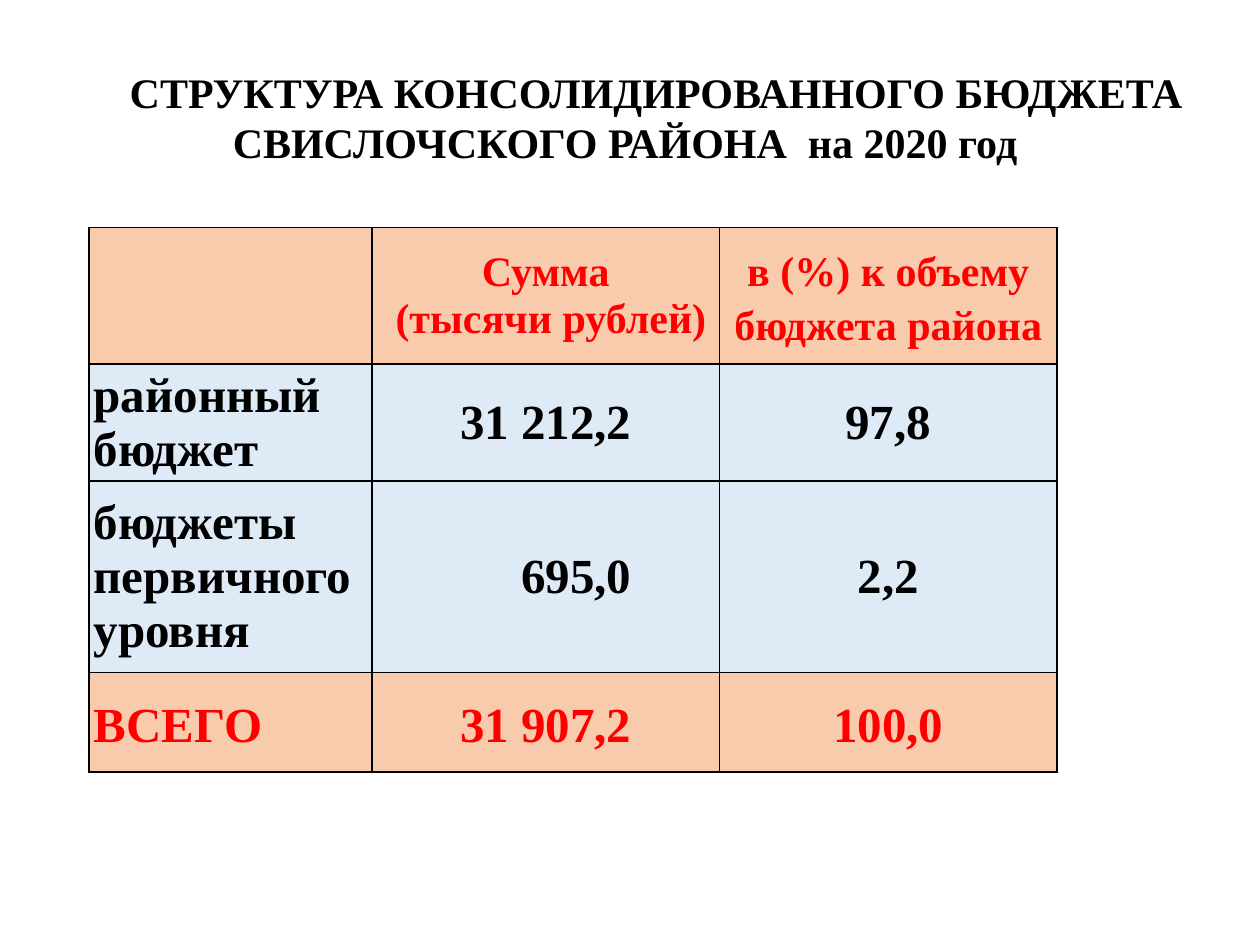
from lxml.etree import SubElement
from pptx import Presentation
from pptx.dml.color import RGBColor
from pptx.enum.text import MSO_ANCHOR, PP_ALIGN
from pptx.oxml.ns import qn
from pptx.util import Cm, Pt

COLORS = {"peach": "F8CBAD", "sky": "DEEBF7", "red": "FF0000", "black": "000000"}


def add_span(para, text, size, color):
    span = para.add_run()
    span.text = text
    span.font.name = "Times New Roman"
    span.font.size = Pt(size)
    span.font.bold = True
    span.font.color.rgb = RGBColor.from_string(COLORS[color])


def add_borders(cell):
    properties = cell._tc.get_or_add_tcPr()
    for position, side in enumerate(("lnL", "lnR", "lnT", "lnB")):
        line = properties.makeelement(qn(f"a:{side}"), {"w": str(Pt(1))})
        fill = SubElement(line, qn("a:solidFill"))
        SubElement(fill, qn("a:srgbClr"), val=COLORS["black"])
        properties.insert(position, line)


deck = Presentation()
deck.slide_width, deck.slide_height = Cm(25.4), Cm(19.05)
page = deck.slides.add_slide(deck.slide_layouts[6])

# Budget table
column_widths = [5.71, 7, 6.81]
row_heights = [2.75, 2.36, 3.86, 2]
rows = [
    ["", "Сумма\n (тысячи рублей)", "в (%) к объему бюджета района"],
    ["районный бюджет", "31 212,2", "97,8"],
    ["бюджеты первичного уровня", "695,0", "2,2"],
    ["ВСЕГО", "31 907,2", "100,0"],
]
row_styles = [("peach", "red", 24), ("sky", "black", 28), ("sky", "black", 28), ("peach", "red", 28)]
loose_cells = {(0, 2), (3, 0), (3, 1), (3, 2)}

table = page.shapes.add_table(
    len(rows), len(column_widths), Cm(1.79), Cm(4.59), Cm(sum(column_widths)), Cm(sum(row_heights))
).table
for column, width in zip(table.columns, column_widths):
    column.width = Cm(width)
for row, height in zip(table.rows, row_heights):
    row.height = Cm(height)

for row_index, (texts, (fill, color, size)) in enumerate(zip(rows, row_styles)):
    for column_index, text in enumerate(texts):
        cell = table.cell(row_index, column_index)
        cell.fill.solid()
        cell.fill.fore_color.rgb = RGBColor.from_string(COLORS[fill])
        cell.vertical_anchor = MSO_ANCHOR.MIDDLE
        cell.margin_left = cell.margin_right = Cm(0.1)
        cell.margin_top = cell.margin_bottom = 0
        add_borders(cell)
        if not text:
            continue
        for line_index, line in enumerate(text.split("\n")):
            frame = cell.text_frame
            para = frame.add_paragraph() if line_index else frame.paragraphs[0]
            para.alignment = PP_ALIGN.CENTER if column_index else PP_ALIGN.LEFT
            if (row_index, column_index) in loose_cells:
                para.line_spacing = 1.15
            add_span(para, line, size, color)

# The shorter sum lines up with the right edge of the others
short_sum = table.cell(2, 1).text_frame.paragraphs[0]
short_sum._p.get_or_add_pPr().set("marL", str(Cm(1.23)))

# Title
title = page.shapes.add_textbox(Cm(0.5), Cm(1.12), Cm(24.2), Cm(3.33))
frame = title.text_frame
frame.word_wrap = True
frame.vertical_anchor = MSO_ANCHOR.TOP
frame.margin_top = Cm(0.22)
first, second = frame.paragraphs[0], frame.add_paragraph()
first._p.get_or_add_pPr().set("indent", str(Cm(1.25)))
for para, text in (
    (first, "СТРУКТУРА КОНСОЛИДИРОВАННОГО БЮДЖЕТА"),
    (second, "СВИСЛОЧСКОГО РАЙОНА  на 2020 год"),
):
    para.alignment = PP_ALIGN.CENTER
    add_span(para, text, 24, "black")

deck.save("out.pptx")
